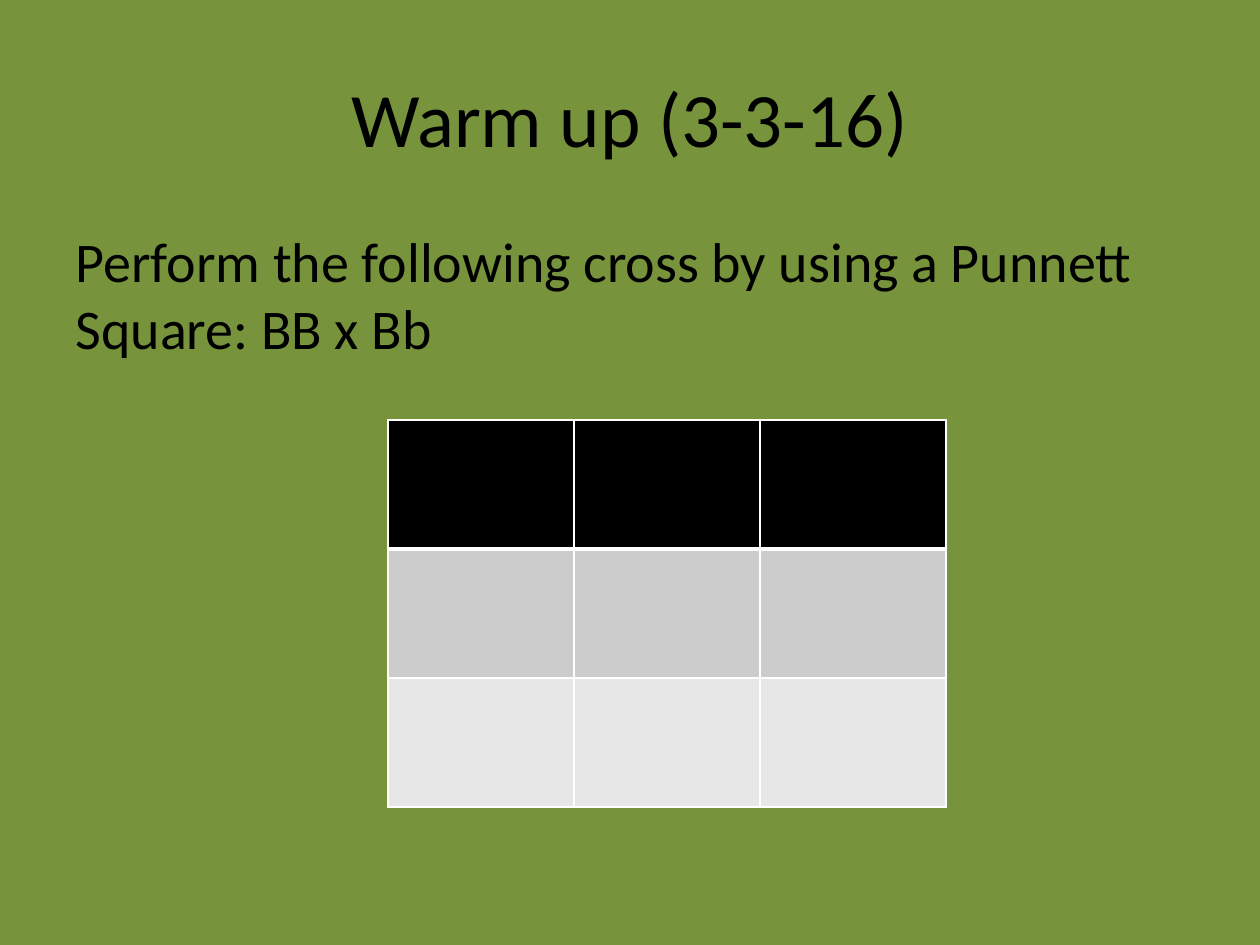
from dataclasses import dataclass

from lxml import etree
from pptx import Presentation
from pptx import util as u
from pptx.dml.color import RGBColor
from pptx.enum import text
from pptx.oxml.ns import qn

PX = 914400 / 126


def px(length: int) -> u.Emu:
    return u.Emu(round(length * PX))


@dataclass(frozen=True)
class Theme:
    font: str = "Calibri"
    background: str = "77933C"
    ink: str = "000000"
    border: str = "FFFFFF"
    rows: tuple[str, ...] = ("000000", "CCCCCC", "E7E7E7")
    title_size: int = 44
    body_size: int = 32
    thin: int = 1
    thick: int = 3


@dataclass(frozen=True)
class Box:
    left: int
    top: int
    width: int
    height: int


THEME = Theme()
TITLE = Box(63, 38, 1134, 157)
BODY = Box(63, 220, 1134, 624)
SQUARE = Box(388, 420, 558, 387)
COLUMNS = 3


def fill_placeholder(holder, box: Box, words: str, size: int,
                     align: text.PP_ALIGN, anchor: text.MSO_ANCHOR):
    """Place a placeholder, write its single paragraph and return that."""
    holder.left, holder.top = px(box.left), px(box.top)
    holder.width, holder.height = px(box.width), px(box.height)
    frame = holder.text_frame
    frame.text = words
    frame.vertical_anchor = anchor
    para = frame.paragraphs[0]
    para.alignment = align
    para.font.name = THEME.font
    para.font.size = u.Pt(size)
    para.font.color.rgb = RGBColor.from_string(THEME.ink)
    return para


def remove_bullet(para) -> None:
    props = para._p.get_or_add_pPr()
    props.set("marL", "0")
    props.set("indent", "0")
    bullet = etree.Element(qn("a:buNone"))
    props.insert_element_before(bullet, "a:tabLst", "a:defRPr", "a:extLst")


def add_border(cell, side: str, width: int) -> None:
    line = etree.SubElement(cell._tc.get_or_add_tcPr(), qn(f"a:ln{side}"),
                            w=str(u.Pt(width)))
    fill = etree.SubElement(line, qn("a:solidFill"))
    etree.SubElement(fill, qn("a:srgbClr"), val=THEME.border)


def add_punnett_square(page, box: Box) -> None:
    count = len(THEME.rows)
    table = page.shapes.add_table(count, COLUMNS, px(box.left), px(box.top),
                                  px(box.width), px(box.height)).table
    for column in table.columns:
        column.width = px(box.width // COLUMNS)
    for index, color in enumerate(THEME.rows):
        table.rows[index].height = px(box.height // count)
        # The header row is set off by a thick rule
        widths = {"L": THEME.thin, "R": THEME.thin,
                  "T": THEME.thick if index == 1 else THEME.thin,
                  "B": THEME.thick if index == 0 else THEME.thin}
        for cell in table.rows[index].cells:
            for side, width in widths.items():
                add_border(cell, side, width)
            cell.fill.solid()
            cell.fill.fore_color.rgb = RGBColor.from_string(color)


def main() -> None:
    deck = Presentation()
    deck.slide_width, deck.slide_height = px(1260), px(945)
    page = deck.slides.add_slide(deck.slide_layouts[1])

    # Background
    page.background.fill.solid()
    page.background.fill.fore_color.rgb = RGBColor.from_string(THEME.background)

    # Title and task
    fill_placeholder(page.shapes.title, TITLE, "Warm up (3-3-16)",
                     THEME.title_size, text.PP_ALIGN.CENTER,
                     text.MSO_ANCHOR.MIDDLE)
    task = fill_placeholder(
        page.placeholders[1], BODY,
        "Perform the following cross by using a Punnett Square: BB x Bb",
        THEME.body_size, text.PP_ALIGN.LEFT, text.MSO_ANCHOR.TOP)
    remove_bullet(task)

    # Blank Punnett square
    add_punnett_square(page, SQUARE)
    deck.save("out.pptx")


if __name__ == "__main__":
    main()
